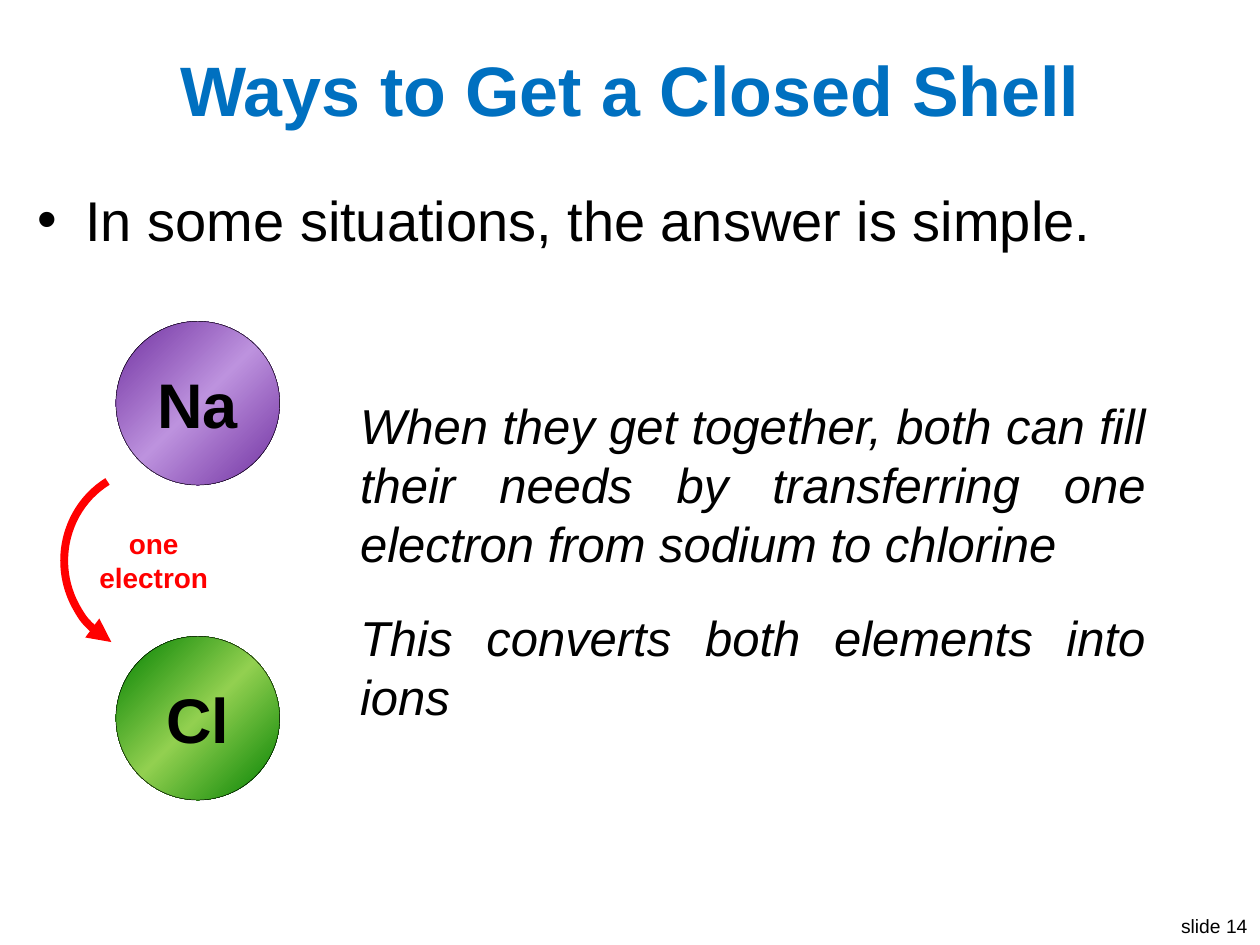
from lxml.etree import SubElement
from pptx import Presentation
from pptx.dml.color import RGBColor
from pptx.enum.shapes import MSO_SHAPE
from pptx.enum.text import MSO_ANCHOR, PP_ALIGN
from pptx.oxml import parse_xml
from pptx.oxml.ns import nsdecls, qn
from pptx.util import Inches, Pt

FONT = "Arial"
BLACK, BLUE, RED = "000000", "0070C0", "FF0000"

TITLE = "Ways to Get a Closed Shell"
BULLET = "In some situations, the answer is simple."
TRANSFER = ["one", "electron"]
EXPLANATIONS = [
    ("When they get together, both can fill their needs by transferring "
     "one electron from sodium to chlorine", 3.09, 1.51),
    ("This converts both elements into ions", 4.77, 1.04),
]
ATOMS = [
    ("Na", 2.55, "7030A0", "BD92DE"),
    ("Cl", 5.05, "008000", "92D050"),
]
FOOTER = "slide 14"


def rgb(value):
    return RGBColor.from_string(value)


def write(frame, lines, size, color=BLACK, align=PP_ALIGN.LEFT,
          bold=False, italic=False, before=0):
    frame.text = "\n".join(lines)
    for paragraph in frame.paragraphs:
        paragraph.alignment = align
        paragraph.space_before = Pt(before)
        for run in paragraph.runs:
            font = run.font
            font.name, font.size = FONT, Pt(size)
            font.bold, font.italic = bold, italic
            font.color.rgb = rgb(color)


def add_text(slide, box, lines, size, wrap=True, **style):
    frame = slide.shapes.add_textbox(*map(Inches, box)).text_frame
    frame.word_wrap = wrap
    write(frame, lines, size, **style)
    return frame


def add_bullet(paragraph):
    properties = paragraph._p.get_or_add_pPr()
    properties.set("marL", str(Inches(0.38)))
    properties.set("indent", str(Inches(-0.38)))
    SubElement(properties, qn("a:buFont")).set("typeface", FONT)
    SubElement(properties, qn("a:buChar")).set("char", "•")


def add_atom(slide, symbol, top, edge, middle):
    atom = slide.shapes.add_shape(
        MSO_SHAPE.OVAL, Inches(0.92), Inches(top), Inches(1.3), Inches(1.3))
    atom.shadow.inherit = False
    atom.line.color.rgb = rgb(BLACK)
    atom.line.width = Pt(0.25)
    atom.fill.gradient()
    atom.fill.gradient_angle = 315
    stops = atom._element.spPr.find(qn("a:gradFill")).find(qn("a:gsLst"))
    for stop in list(stops):
        stops.remove(stop)
    for percent, color in ((0, edge), (50, middle), (100, edge)):
        stops.append(parse_xml(
            f'<a:gs {nsdecls("a")} pos="{percent * 1000}">'
            f'<a:srgbClr val="{color}"/></a:gs>'))
    frame = atom.text_frame
    frame.margin_left = frame.margin_right = 0
    frame.margin_top = frame.margin_bottom = 0
    frame.vertical_anchor = MSO_ANCHOR.MIDDLE
    write(frame, [symbol], 36, align=PP_ALIGN.CENTER, bold=True)


def add_transfer_arrow(slide):
    arrow = slide.shapes.add_shape(
        MSO_SHAPE.ARC, Inches(0.51), Inches(3.72), Inches(1.4), Inches(1.46))
    arrow.shadow.inherit = False
    arrow.adjustments[0] = 179.73
    arrow.adjustments[1] = 37.94
    arrow._element.spPr.xfrm.set("flipH", "1")
    arrow.fill.background()
    arrow.line.color.rgb = rgb(RED)
    arrow.line.width = Pt(4.5)
    SubElement(arrow.line._get_or_add_ln(), qn("a:tailEnd")).set("type", "triangle")


def main():
    deck = Presentation()
    deck.slide_width, deck.slide_height = Inches(10), Inches(7.5)
    slide = deck.slides.add_slide(deck.slide_layouts[6])

    add_text(slide, (9.25, 7.21, 0.75, 0.29), [FOOTER], 11,
             wrap=False, align=PP_ALIGN.RIGHT)
    title = add_text(slide, (0.2, 0.3, 9.6, 0.8), [TITLE], 40,
                     color=BLUE, align=PP_ALIGN.CENTER, bold=True)
    title.vertical_anchor = MSO_ANCHOR.MIDDLE
    statement = add_text(slide, (0.2, 1.42, 9.6, 0.64), [BULLET], 32, before=12)
    add_bullet(statement.paragraphs[0])

    for atom in ATOMS:
        add_atom(slide, *atom)
    add_transfer_arrow(slide)
    add_text(slide, (0.66, 4.13, 1.12, 0.64), TRANSFER, 16,
             color=RED, align=PP_ALIGN.CENTER, bold=True)

    for sentence, top, height in EXPLANATIONS:
        add_text(slide, (2.76, top, 6.43, height), [sentence], 28,
                 align=PP_ALIGN.JUSTIFY, italic=True, before=12)

    deck.save("out.pptx")


if __name__ == "__main__":
    main()
